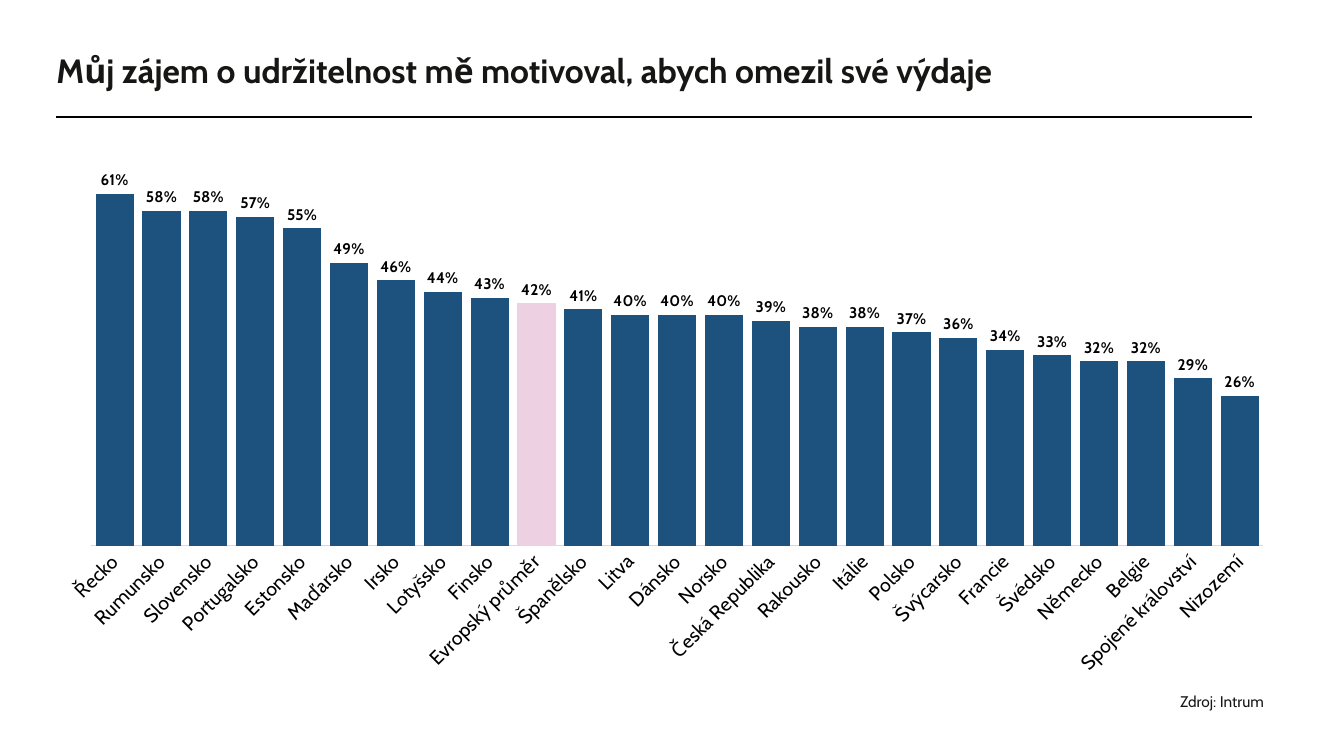
"""Build a slide with a column chart of sustainability-driven spending cuts by country."""
from lxml.etree import SubElement
from pptx import Presentation
from pptx.chart.data import CategoryChartData
from pptx.dml.color import RGBColor
from pptx.enum.chart import XL_CHART_TYPE as ChartType, XL_LABEL_POSITION as LabelPos
from pptx.enum.chart import XL_TICK_MARK as TickMark
from pptx.enum.shapes import MSO_CONNECTOR as Connector
from pptx.enum.text import MSO_ANCHOR as Anchor, MSO_AUTO_SIZE as AutoSize, PP_ALIGN as Align
from pptx.oxml.ns import qn
from pptx.util import Pt

TITLE = "Můj zájem o udržitelnost mě motivoval, abych omezil své výdaje"
SOURCE = "Zdroj: Intrum"
AVERAGE = "Evropský průměr"
SHARES = {
    "Řecko": 0.61, "Rumunsko": 0.58, "Slovensko": 0.58, "Portugalsko": 0.57,
    "Estonsko": 0.55, "Maďarsko": 0.49, "Irsko": 0.46, "Lotyšsko": 0.44,
    "Finsko": 0.43, AVERAGE: 0.42, "Španělsko": 0.41, "Litva": 0.40,
    "Dánsko": 0.40, "Norsko": 0.40, "Česká Republika": 0.39, "Rakousko": 0.38,
    "Itálie": 0.38, "Polsko": 0.37, "Švýcarsko": 0.36, "Francie": 0.34,
    "Švédsko": 0.33, "Německo": 0.32, "Belgie": 0.32,
    "Spojené království": 0.29, "Nizozemí": 0.26,
}
PLOT_AREA = {"x": 0.04, "y": 0.03, "w": 0.94, "h": 0.72}

FONT = "Cabin"
INK = RGBColor(0x16, 0x16, 0x14)
BLACK = RGBColor(0, 0, 0)
BLUE = RGBColor(0x1D, 0x52, 0x7F)
PINK = RGBColor(0xED, 0xD0, 0xE1)
GREY = RGBColor(0xD9, 0xD9, 0xD9)
LEFT = Pt(40.3)


def style(font, size, color, bold=False):
    font.name, font.size, font.bold = FONT, Pt(size), bold
    font.color.rgb = color


def add_title(s):
    title = s.shapes.title
    title.left, title.top, title.width, title.height = LEFT, Pt(38.9), Pt(880), Pt(54.7)
    tf = title.text_frame
    tf.text = TITLE
    tf.margin_left = tf.margin_right = tf.margin_top = tf.margin_bottom = 0
    tf.vertical_anchor = Anchor.TOP
    tf.auto_size = AutoSize.NONE
    p = tf.paragraphs[0]
    p.alignment, p.line_spacing = Align.LEFT, 0.9
    style(p.runs[0].font, 24, INK, True)


def add_rule(s):
    rule = s.shapes.add_connector(Connector.STRAIGHT, LEFT, Pt(83.5), Pt(894.2), Pt(83.5))
    rule.line.color.rgb = BLACK
    rule.line.width = Pt(1.5)
    SubElement(rule._element.spPr, qn("a:effectLst"))


def add_source(s):
    tf = s.shapes.add_textbox(Pt(835.9), Pt(491), Pt(76.3), Pt(20.9)).text_frame
    tf.text = SOURCE
    tf.word_wrap = False
    tf.auto_size = AutoSize.SHAPE_TO_FIT_TEXT
    style(tf.paragraphs[0].runs[0].font, 11, INK)


def place_plot(chart):
    area = chart._chartSpace.chart.plotArea
    for old in area.findall(qn("c:layout")):
        area.remove(old)
    layout = SubElement(area, qn("c:layout"))
    area.insert(0, layout)
    manual = SubElement(layout, qn("c:manualLayout"))
    settings = {"layoutTarget": "inner", "xMode": "edge", "yMode": "edge", **PLOT_AREA}
    for tag, value in settings.items():
        SubElement(manual, qn(f"c:{tag}")).set("val", str(value))


def add_shares_chart(s):
    data = CategoryChartData(number_format="0%")
    data.categories = list(SHARES)
    data.add_series("Series 1", list(SHARES.values()))
    chart = s.shapes.add_chart(
        ChartType.COLUMN_CLUSTERED, Pt(29.5), Pt(89.3), Pt(890.6), Pt(401), data).chart
    chart.has_legend = chart.has_title = False
    style(chart.font, 10, BLACK)
    place_plot(chart)

    cat = chart.category_axis
    cat.major_tick_mark = TickMark.NONE
    cat.format.line.color.rgb = GREY
    cat.format.line.width = Pt(0.75)
    style(cat.tick_labels.font, 14, BLACK)
    cat._element.find(qn("c:txPr")).find(qn("a:bodyPr")).set("rot", "-2700000")

    val = chart.value_axis
    val.minimum_scale, val.maximum_scale = 0, 0.7
    val.has_major_gridlines = val.visible = False

    plot = chart.plots[0]
    plot.gap_width, plot.vary_by_categories = 23, False
    plot.has_data_labels = True
    labels = plot.data_labels
    labels.show_value, labels.position = True, LabelPos.OUTSIDE_END
    labels.number_format, labels.number_format_is_linked = "0%", False
    style(labels.font, 11, BLACK, True)

    series = plot.series[0]
    average = series.points[list(SHARES).index(AVERAGE)]
    for part, color in ((series, BLUE), (average, PINK)):
        part.format.fill.solid()
        part.format.fill.fore_color.rgb = color


def main():
    prs = Presentation()
    prs.slide_width, prs.slide_height = Pt(960), Pt(540)
    s = prs.slides.add_slide(prs.slide_layouts[5])
    add_title(s)
    add_source(s)
    add_rule(s)
    add_shares_chart(s)
    prs.save("out.pptx")


if __name__ == "__main__":
    main()
